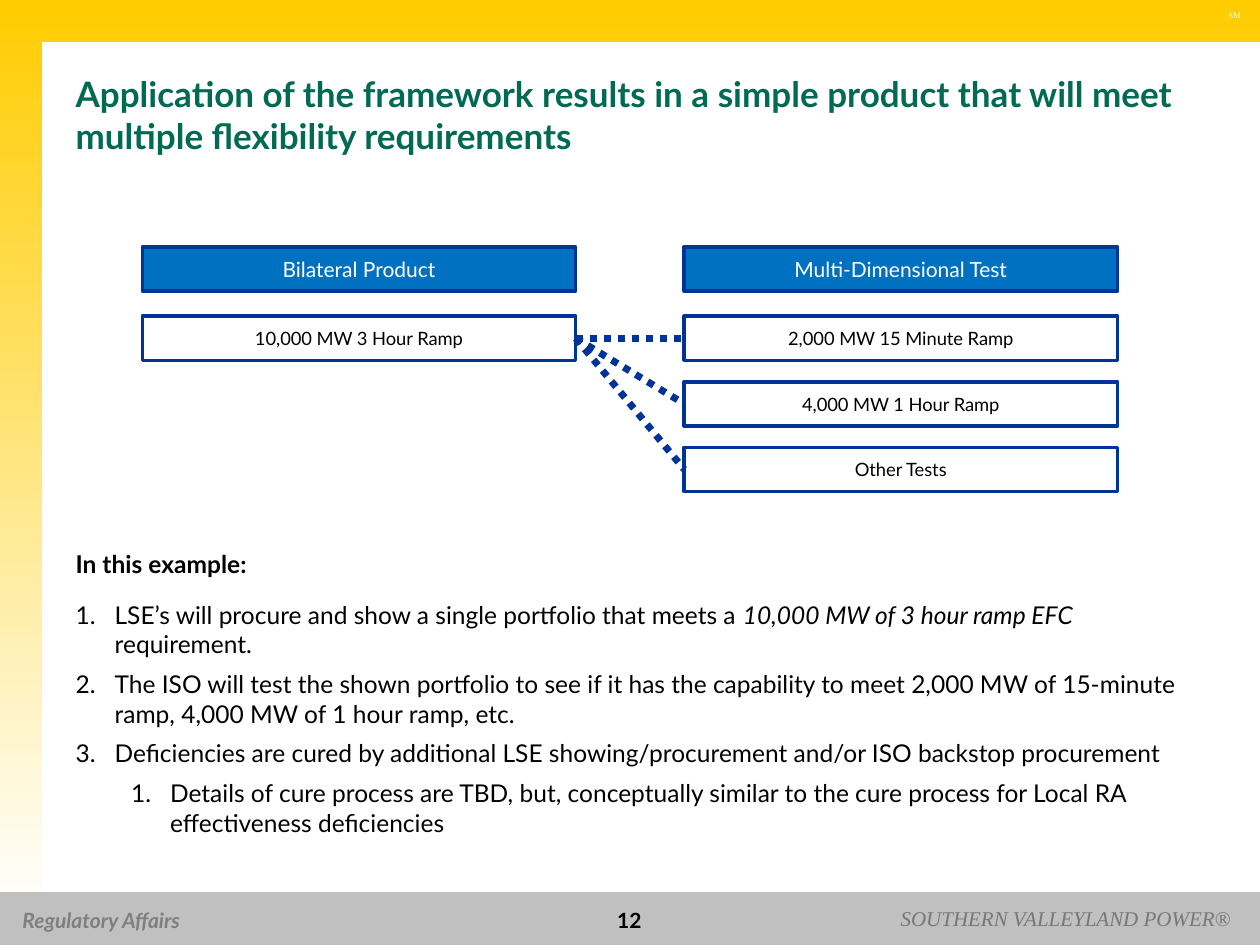
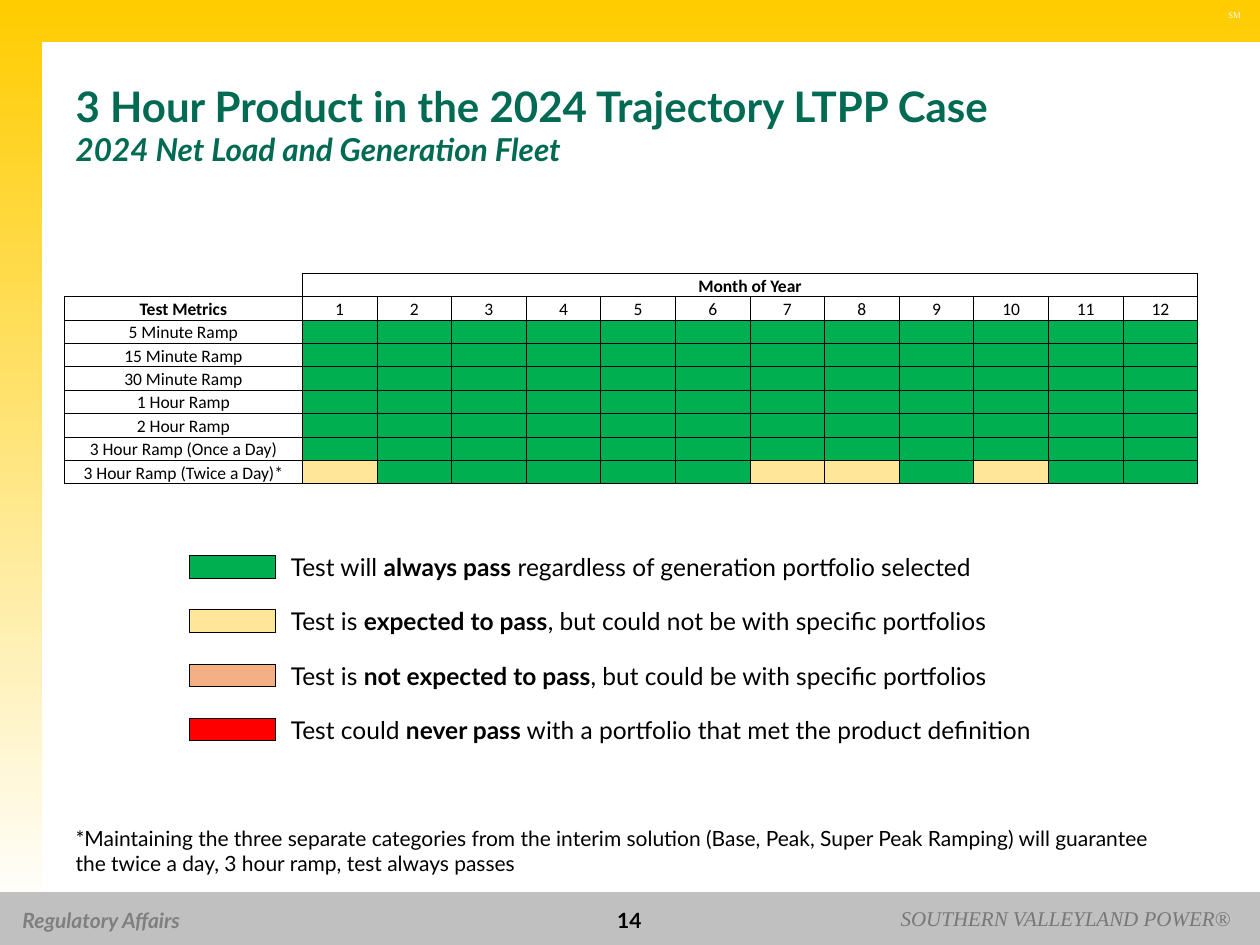
import pptx
import pptx.util
import pptx.dml.color
import pptx.enum.dml
import pptx.enum.shapes
import pptx.enum.text
import pptx.oxml.ns
from lxml import etree

RGB = pptx.dml.color.RGBColor
Inch = pptx.util.Inches
Pt = pptx.util.Pt
qn = pptx.oxml.ns.qn
ALIGN = pptx.enum.text.PP_ALIGN
ANCHOR = pptx.enum.text.MSO_ANCHOR
RECT = pptx.enum.shapes.MSO_SHAPE.RECTANGLE

GOLD = RGB(0xFF, 0xCC, 0x00)
WHITE = RGB(0xFF, 0xFF, 0xFF)
BLACK = RGB(0x00, 0x00, 0x00)
SILVER = RGB(0xC0, 0xC0, 0xC0)
GRAY = RGB(0x7F, 0x7F, 0x7F)
SLATE = RGB(0x77, 0x77, 0x77)
PINE = RGB(0x00, 0x6A, 0x53)
NAVY = RGB(0x00, 0x33, 0x99)
BLUE = RGB(0x00, 0x70, 0xC0)
GREEN = RGB(0x00, 0xB0, 0x50)
CREAM = RGB(0xFF, 0xE6, 0x99)
PEACH = RGB(0xF4, 0xB0, 0x84)
RED = RGB(0xFF, 0x00, 0x00)

WIDE, HIGH = 10, 7.5
EDGE = 0.33
FOOT = 7.08
LEFT = 0.5
SERIF = "Times New Roman"

RAMP_TITLE = ["Application of the framework results in a simple product "
              "that will meet multiple flexibility requirements"]
FLOW = [
    (1.13, "Bilateral Product", ["10,000 MW 3 Hour Ramp"]),
    (5.43, "Multi-Dimensional Test",
     ["2,000 MW 15 Minute Ramp", "4,000 MW 1 Hour Ramp", "Other Tests"]),
]
LEAD = [("In this example:", {"bold": True})]
STEPS = [
    (0, ["LSE’s will procure and show a single portfolio that meets a ",
         ("10,000 MW of 3 hour ramp EFC", {"italic": True}), " requirement."]),
    (0, ["The ISO will test the shown portfolio to see if it has the capability to meet "
         "2,000 MW of 15-minute ramp, 4,000 MW of 1 hour ramp, etc."]),
    (0, ["Deficiencies are cured by additional LSE showing/procurement "
         "and/or ISO backstop procurement"]),
    (1, ["Details of cure process are TBD, but, conceptually similar to the cure process "
         "for Local RA effectiveness deficiencies"]),
]

CASE_TITLE = [
    ["3 Hour Product in the 2024 Trajectory LTPP Case"],
    [("2024 Net Load and Generation Fleet", {"size": 18, "italic": True})],
]
TESTS = ["5 Minute Ramp", "15 Minute Ramp", "30 Minute Ramp", "1 Hour Ramp", "2 Hour Ramp",
         "3 Hour Ramp (Once a Day)", "3 Hour Ramp (Twice a Day)*"]
MONTHS = 12
LIKELY = {(TESTS[-1], month) for month in (1, 7, 8, 10)}
LEGEND = [
    (GREEN, "Test will ", "always pass", " regardless of generation portfolio selected"),
    (CREAM, "Test is ", "expected to pass", ", but could not be with specific portfolios"),
    (PEACH, "Test is ", "not expected to pass", ", but could be with specific portfolios"),
    (RED, "Test could ", "never pass", " with a portfolio that met the product definition"),
]
NOTE = ["*Maintaining the three separate categories from the interim solution (Base, Peak, "
        "Super Peak Ramping) will guarantee the twice a day, 3 hour ramp, test always passes"]


def write(para, runs, size=14, font="Lato", color=BLACK, bold=False, italic=False,
          align=ALIGN.LEFT, before=0, after=0):
    para.alignment = align
    para.space_before, para.space_after = Pt(before), Pt(after)
    for part in runs:
        words, own = part if isinstance(part, tuple) else (part, {})
        run = para.add_run()
        run.text = words
        face = run.font
        face.name = font
        face.size = Pt(own.get("size", size))
        face.bold = own.get("bold", bold)
        face.italic = own.get("italic", italic)
        face.color.rgb = color


def indent(para, left=0, hang=0, number=False):
    props = para._p.get_or_add_pPr()
    props.set("marL", str(Inch(left)))
    props.set("indent", str(-Inch(hang)))
    if number:
        etree.SubElement(props, qn("a:buAutoNum"), type="arabicPeriod")
    else:
        etree.SubElement(props, qn("a:buNone"))


def place(shape, x, y, w, h):
    shape.left, shape.top, shape.width, shape.height = map(Inch, (x, y, w, h))
    shape.text_frame.word_wrap = True
    shape.text_frame.auto_size = pptx.enum.text.MSO_AUTO_SIZE.NONE
    return shape.text_frame


def label(slide, spot, runs, anchor=ANCHOR.TOP, **style):
    frame = place(slide.shapes.add_textbox(0, 0, 0, 0), *spot)
    frame.vertical_anchor = anchor
    write(frame.paragraphs[0], runs, **style)


def box(slide, spot, fill, line=None, width=0.5):
    shape = slide.shapes.add_shape(RECT, *map(Inch, spot))
    shape.shadow.inherit = False
    shape.fill.solid()
    shape.fill.fore_color.rgb = fill
    if line is None:
        shape.line.fill.background()
    else:
        shape.line.color.rgb = line
        shape.line.width = Pt(width)
    return shape


def band(slide):
    low = 7.25
    pen = slide.shapes.build_freeform(0, Inch(low), scale=1.0)
    points = [(0, 0), (WIDE, 0), (WIDE, EDGE), (EDGE, EDGE), (EDGE, low)]
    pen.add_line_segments([(Inch(x), Inch(y)) for x, y in points], close=True)
    shape = pen.convert_to_shape()
    shape.shadow.inherit = False
    shape.line.fill.background()
    shape.fill.gradient()
    shape.fill.gradient_angle = 270
    for stop, color in zip(shape.fill.gradient_stops, (GOLD, WHITE)):
        stop.color.rgb = color


def start(deck, page, title, spot, size):
    slide = deck.slides.add_slide(deck.slide_layouts[1])
    band(slide)
    box(slide, (0, FOOT, WIDE, HIGH - FOOT), SILVER)
    label(slide, (0.08, 7.15, 1.9, 0.3), ["Regulatory Affairs"],
          size=12, color=GRAY, bold=True, italic=True)
    label(slide, (9.65, 0.03, 0.34, 0.18), ["SM"], size=5, font=SERIF, color=WHITE)
    label(slide, (6.87, 7.14, 3, 0.3), ["SOUTHERN VALLEYLAND POWER®"],
          size=12, font=SERIF, color=SLATE, italic=True, align=ALIGN.RIGHT)
    label(slide, (3.83, 7.14, 2.33, 0.33), [str(page)], anchor=ANCHOR.MIDDLE,
          size=12, bold=True, align=ALIGN.CENTER)
    frame = place(slide.shapes.title, *spot)
    frame.vertical_anchor = ANCHOR.MIDDLE
    for i, runs in enumerate(title):
        para = frame.add_paragraph() if i else frame.paragraphs[0]
        write(para, runs, size=size, color=PINE, bold=True)
    return slide


def flow(slide):
    wide, high, head, top, pitch = 3.44, 0.35, 1.96, 2.51, 0.52

    def node(x, y, words, fill, color, size):
        shape = box(slide, (x, y, wide, high), fill, NAVY, 2)
        shape.text_frame.vertical_anchor = ANCHOR.MIDDLE
        write(shape.text_frame.paragraphs[0], [words], size=size, color=color,
              align=ALIGN.CENTER)

    for x, name, items in FLOW:
        node(x, head, name, BLUE, WHITE, 12)
        for i, item in enumerate(items):
            node(x, top + i * pitch, item, WHITE, BLACK, 10.5)
    (source, _, _), (target, _, tests) = FLOW
    mid = top + high / 2
    for i in range(len(tests)):
        ends = (source + wide, mid, target, mid + i * pitch)
        link = slide.shapes.add_connector(
            pptx.enum.shapes.MSO_CONNECTOR.STRAIGHT, *map(Inch, ends))
        link.line.color.rgb = NAVY
        link.line.width = Pt(4)
        link.line.dash_style = pptx.enum.dml.MSO_LINE.ROUND_DOT
        etree.SubElement(link._element.spPr, qn("a:effectLst"))


def steps(slide):
    frame = place(slide.placeholders[1], LEFT, 4.31, 9.1, 2.36)
    indent(frame.paragraphs[0])
    write(frame.paragraphs[0], LEAD, after=6)
    for level, runs in STEPS:
        para = frame.add_paragraph()
        para.level = level
        indent(para, (0.31, 0.75)[level], 0.31, number=True)
        write(para, runs, before=6)


def border(cell, sides):
    props = cell._tc.get_or_add_tcPr()
    for side in sides:
        line = etree.SubElement(props, qn("a:ln" + side), w=str(Pt(0.5)))
        fill = etree.SubElement(line, qn("a:solidFill"))
        etree.SubElement(fill, qn("a:srgbClr"), val=str(BLACK))


def grid(slide):
    rows, first, wide, high = len(TESTS) + 2, 1.89, 9, 1.67
    frame = slide.shapes.add_table(rows, MONTHS + 1, Inch(0.51), Inch(2.17),
                                   Inch(wide), Inch(high))
    table = frame.table
    table.first_row = table.horz_banding = False
    for i, col in enumerate(table.columns):
        col.width = Inch((wide - first) / MONTHS if i else first)
    for row in table.rows:
        row.height = Inch(high / rows)
    words = [["", "Month of Year"] + [""] * (MONTHS - 1),
             ["Test Metrics"] + [str(m + 1) for m in range(MONTHS)]]
    words += [[test] + [""] * MONTHS for test in TESTS]
    for r, line in enumerate(words):
        for c, word in enumerate(line):
            cell = table.cell(r, c)
            cell.margin_left = cell.margin_right = cell.margin_top = Inch(0.01)
            cell.margin_bottom = 0
            cell.vertical_anchor = ANCHOR.BOTTOM
            border(cell, "LRTB" if r or c else "RB")
            if r > 1 and c:
                cell.fill.solid()
                cell.fill.fore_color.rgb = CREAM if (line[0], c) in LIKELY else GREEN
            else:
                cell.fill.background()
            para = cell.text_frame.paragraphs[0]
            if word:
                write(para, [word], size=10, font="Calibri", align=ALIGN.CENTER,
                      bold=r == 0 or (r, c) == (1, 0))
            else:
                etree.SubElement(para._p, qn("a:endParaRPr"), sz="800")
    table.cell(0, 1).merge(table.cell(0, MONTHS))


def legend(slide):
    top, pitch = 4.33, 0.43
    for i, (color, lead, key, rest) in enumerate(LEGEND):
        y = top + i * pitch
        box(slide, (1.5, y + 0.08, 0.69, 0.18), color, BLACK)
        label(slide, (2.21, y, 6.5, 0.34), [lead, (key, {"bold": True}), rest],
              anchor=ANCHOR.MIDDLE)


def note(slide):
    frame = place(slide.placeholders[1], LEFT, 6.5, 9, 0.5)
    indent(frame.paragraphs[0])
    write(frame.paragraphs[0], NOTE, size=12)


def main():
    deck = pptx.Presentation()
    deck.slide_width, deck.slide_height = Inch(WIDE), Inch(HIGH)
    ramp = start(deck, 12, [RAMP_TITLE], (LEFT, 0.46, 9, 0.9), 20)
    flow(ramp)
    steps(ramp)
    case = start(deck, 14, CASE_TITLE, (LEFT, 0.39, 9, 1.19), 24)
    grid(case)
    legend(case)
    note(case)
    deck.save("out.pptx")


if __name__ == "__main__":
    main()
